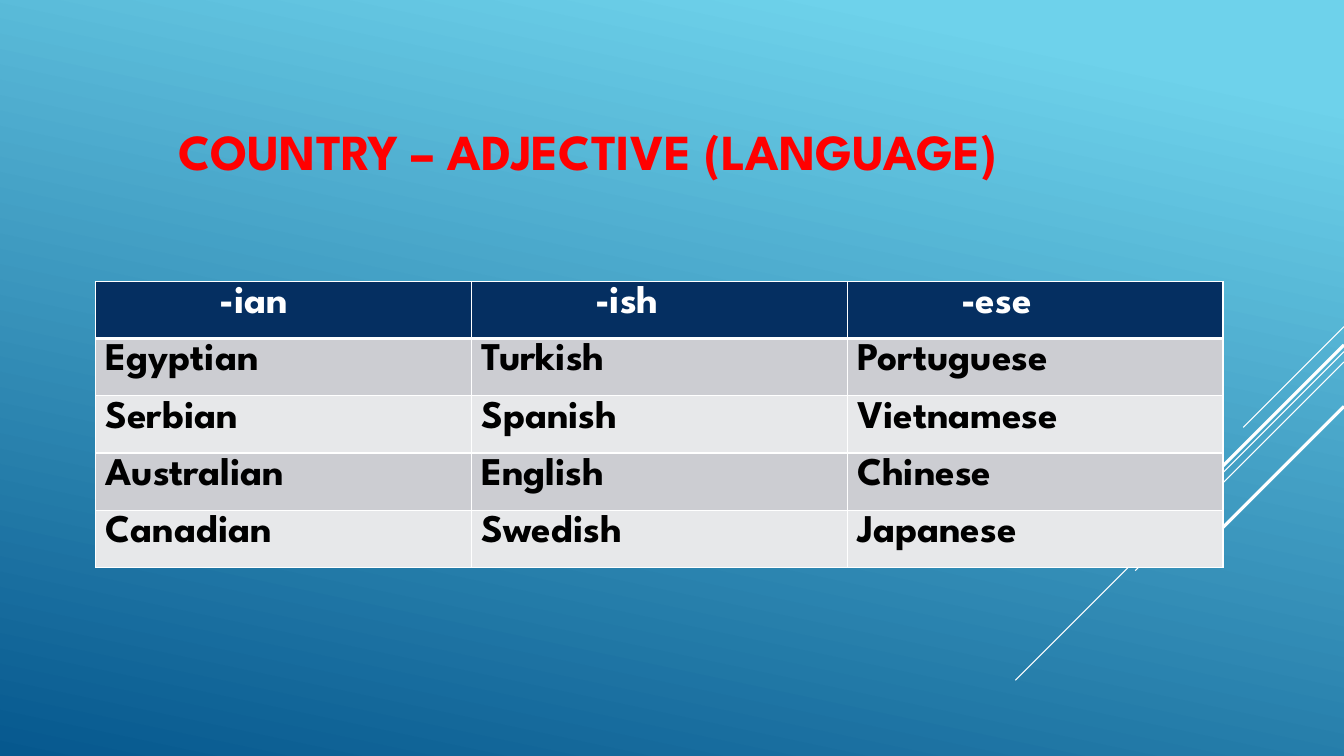
from dataclasses import dataclass

from lxml import etree
from pptx import Presentation
from pptx import util as u
from pptx.dml.color import RGBColor
from pptx.enum import shapes, text
from pptx.oxml import ns
from pptx.slide import Slide
from pptx.table import _Cell as Cell
from pptx.text.text import _Paragraph as Paragraph


@dataclass(frozen=True)
class Theme:
    font: str = "League Spartan"
    title_size: int = 36
    table_size: int = 28
    title: str = "FF0000"
    sky_light: str = "6ED2EB"
    sky_dark: str = "06588E"
    white: str = "FFFFFF"
    ink: str = "000000"
    header: str = "052F61"
    bands: tuple[str, str] = ("CCCDD2", "E7E8EA")


@dataclass(frozen=True)
class Ray:
    """A 45° line running down and left from the right edge, in cm."""
    top: float
    run: float
    weight: float


@dataclass(frozen=True)
class Column:
    suffix: str
    indent: float
    words: tuple[str, ...]


THEME = Theme()
SLIDE_WIDTH, SLIDE_HEIGHT = 33.87, 19.05
TABLE_LEFT, TABLE_TOP = 2.41, 7.09
COLUMN_WIDTH, ROW_HEIGHT = 9.47, 1.42
CELL_MARGIN = 0.25
THIN, THICK = 1, 3

RAYS = (
    Ray(8.23, 2.54, 0.75),
    Ray(8.86, 8.28, 0.75),
    Ray(9.12, 5.26, 0.75),
    Ray(8.69, 4.85, 2.25),
    Ray(10.24, 3.53, 2.25),
)
COLUMNS = (
    Column("-ian", 2.87, ("Egyptian", "Serbian", "Australian", "Canadian")),
    Column("-ish", 2.87, ("Turkish", "Spanish", "English", "Swedish")),
    Column("-ese", 2.62, ("Portuguese", "Vietnamese", "Chinese", "Japanese")),
)


def rgb(colour: str) -> RGBColor:
    return RGBColor.from_string(colour)


def write(para: Paragraph, wording: str, size: int, colour: str) -> None:
    para.text = wording
    para.font.name = THEME.font
    para.font.size = u.Pt(size)
    para.font.bold = True
    para.font.color.rgb = rgb(colour)


def paint_background(page: Slide) -> None:
    fill = page.background.fill
    fill.gradient()
    fill.gradient_angle = 258
    stops = ((0.1, THEME.sky_light), (1.0, THEME.sky_dark))
    for stop, (position, colour) in zip(fill.gradient_stops, stops):
        stop.position = position
        stop.color.rgb = rgb(colour)


def draw_ray(page: Slide, ray: Ray) -> None:
    line = page.shapes.add_connector(
        shapes.MSO_CONNECTOR.STRAIGHT,
        u.Cm(SLIDE_WIDTH), u.Cm(ray.top),
        u.Cm(SLIDE_WIDTH - ray.run), u.Cm(ray.top + ray.run),
    )
    line.line.color.rgb = rgb(THEME.white)
    line.line.width = u.Pt(ray.weight)
    etree.SubElement(line._element.spPr, ns.qn("a:effectLst"))


def draw_title(page: Slide, wording: str) -> None:
    box = page.shapes.add_textbox(u.Cm(4.24), u.Cm(2.97), u.Cm(26.62), u.Cm(1.65))
    frame = box.text_frame
    frame.word_wrap = True
    frame.vertical_anchor = text.MSO_ANCHOR.MIDDLE
    write(frame.paragraphs[0], wording, THEME.title_size, THEME.title)


def border_cell(cell: Cell, top: float, bottom: float) -> None:
    """Add white borders; call before filling, as the schema puts lines first."""
    properties = cell._tc.get_or_add_tcPr()
    for side, weight in (("L", THIN), ("R", THIN), ("T", top), ("B", bottom)):
        line = etree.SubElement(properties, ns.qn(f"a:ln{side}"), w=str(u.Pt(weight)))
        solid = etree.SubElement(line, ns.qn("a:solidFill"))
        etree.SubElement(solid, ns.qn("a:srgbClr"), val=THEME.white)


def fill_cell(cell: Cell, row: int, wording: str, indent: float) -> None:
    is_header = row == 0
    border_cell(cell, THICK if row == 1 else THIN, THICK if is_header else THIN)
    cell.fill.solid()
    cell.fill.fore_color.rgb = rgb(THEME.header if is_header else THEME.bands[(row - 1) % 2])
    cell.margin_left = u.Cm(CELL_MARGIN + indent)
    write(cell.text_frame.paragraphs[0], wording, THEME.table_size,
          THEME.white if is_header else THEME.ink)


def draw_table(page: Slide) -> None:
    row_count = 1 + len(COLUMNS[0].words)
    table = page.shapes.add_table(
        row_count, len(COLUMNS), u.Cm(TABLE_LEFT), u.Cm(TABLE_TOP),
        u.Cm(COLUMN_WIDTH * len(COLUMNS)), u.Cm(ROW_HEIGHT * row_count),
    ).table
    for table_row in table.rows:
        table_row.height = u.Cm(ROW_HEIGHT)
    for index, column in enumerate(COLUMNS):
        table.columns[index].width = u.Cm(COLUMN_WIDTH)
        for row, wording in enumerate((column.suffix, *column.words)):
            indent = column.indent if row == 0 else 0
            fill_cell(table.cell(row, index), row, wording, indent)


def main() -> None:
    deck = Presentation()
    deck.slide_width, deck.slide_height = u.Cm(SLIDE_WIDTH), u.Cm(SLIDE_HEIGHT)
    page = deck.slides.add_slide(deck.slide_layouts[6])
    paint_background(page)
    for ray in RAYS:
        draw_ray(page, ray)
    draw_title(page, "COUNTRY – ADJECTIVE (LANGUAGE)")
    draw_table(page)
    deck.save("out.pptx")


if __name__ == "__main__":
    main()
